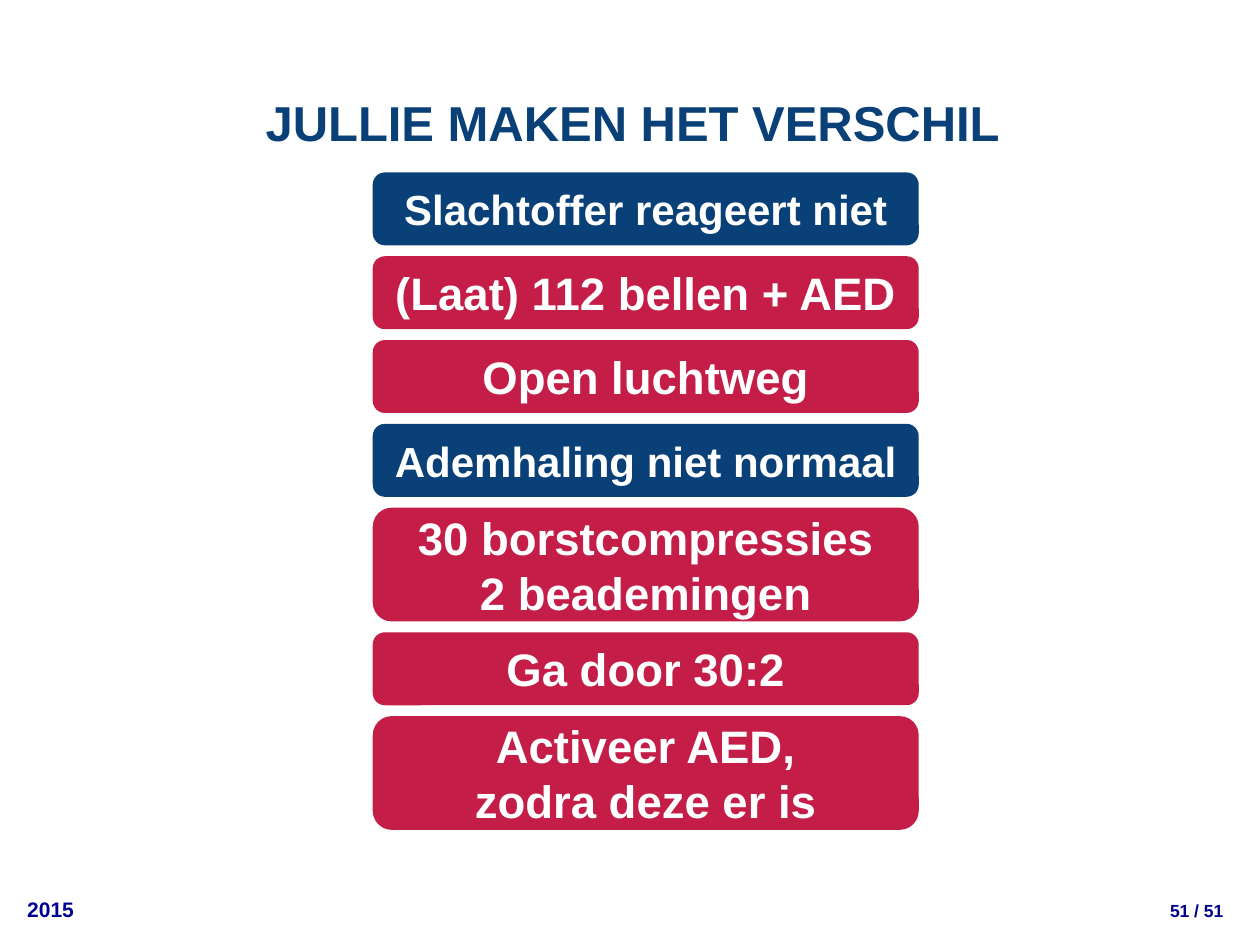
import pptx
import pptx.dml.color
import pptx.enum.shapes
import pptx.enum.text
import pptx.util

Pt = pptx.util.Pt
RGB = pptx.dml.color.RGBColor
Align = pptx.enum.text.PP_ALIGN
Anchor = pptx.enum.text.MSO_ANCHOR
Fit = pptx.enum.text.MSO_AUTO_SIZE

BLUE = RGB(0x08, 0x40, 0x77)
RED = RGB(0xC4, 0x1D, 0x48)
NAVY = RGB(0x00, 0x00, 0x90)
WHITE = RGB(0xFF, 0xFF, 0xFF)

LEFT, TOP, WIDTH, GAP = 213, 98.5, 312, 6.2
LOW, TALL = 41.7, 65

STEPS = [
    (BLUE, 24, ["Slachtoffer reageert niet"]),
    (RED, 26, ["(Laat) 112 bellen + AED"]),
    (RED, 26, ["Open luchtweg"]),
    (BLUE, 24, ["Ademhaling niet normaal"]),
    (RED, 26, ["30 borstcompressies", "2 beademingen"]),
    (RED, 26, ["Ga door 30:2"]),
    (RED, 26, ["Activeer AED,", "zodra deze er is"]),
]


class Deck:
    """Holds the font and the current slide."""

    font = "Arial"

    def __init__(self, slide):
        self.slide = slide

    def text(self, frame, lines, size, color, align, anchor):
        frame.vertical_anchor = anchor
        for i, line in enumerate(lines):
            para = frame.add_paragraph() if i else frame.paragraphs[0]
            para.alignment = align
            run = para.add_run()
            run.text = line
            run.font.name = self.font
            run.font.size = Pt(size)
            run.font.bold = True
            run.font.color.rgb = color

    def title(self, text, x, y, w, h):
        shape = self.slide.shapes.title
        shape.left, shape.top, shape.width, shape.height = map(Pt, (x, y, w, h))
        frame = shape.text_frame
        frame.auto_size = Fit.NONE
        self.text(frame, [text], 28, BLUE, Align.CENTER, Anchor.TOP)

    def label(self, text, size, x, y, w, h):
        box = self.slide.shapes.add_textbox(*map(Pt, (x, y, w, h)))
        frame = box.text_frame
        frame.word_wrap = False
        frame.auto_size = Fit.SHAPE_TO_FIT_TEXT
        self.text(frame, [text], size, NAVY, Align.LEFT, Anchor.MIDDLE)

    def step(self, lines, size, fill, y, h):
        kind = pptx.enum.shapes.MSO_SHAPE.ROUNDED_RECTANGLE
        box = self.slide.shapes.add_shape(kind, *map(Pt, (LEFT, y, WIDTH, h)))
        box.shadow.inherit = False
        box.fill.solid()
        box.fill.fore_color.rgb = fill
        box.line.fill.background()
        self.text(box.text_frame, lines, size, WHITE, Align.CENTER, Anchor.MIDDLE)


def main():
    prs = pptx.Presentation()
    prs.slide_width, prs.slide_height = Pt(720), Pt(540)
    deck = Deck(prs.slides.add_slide(prs.slide_layouts[5]))

    deck.label("2015", 12, 8.5, 509, 50, 21.6)
    deck.label("51 / 51", 10, 661.5, 510.5, 53.5, 19.4)
    deck.title("JULLIE MAKEN HET VERSCHIL", 17.5, 49, 688, 36)

    y = TOP
    for fill, size, lines in STEPS:
        h = TALL if len(lines) > 1 else LOW
        deck.step(lines, size, fill, y, h)
        y += h + GAP

    prs.save("out.pptx")


if __name__ == "__main__":
    main()
